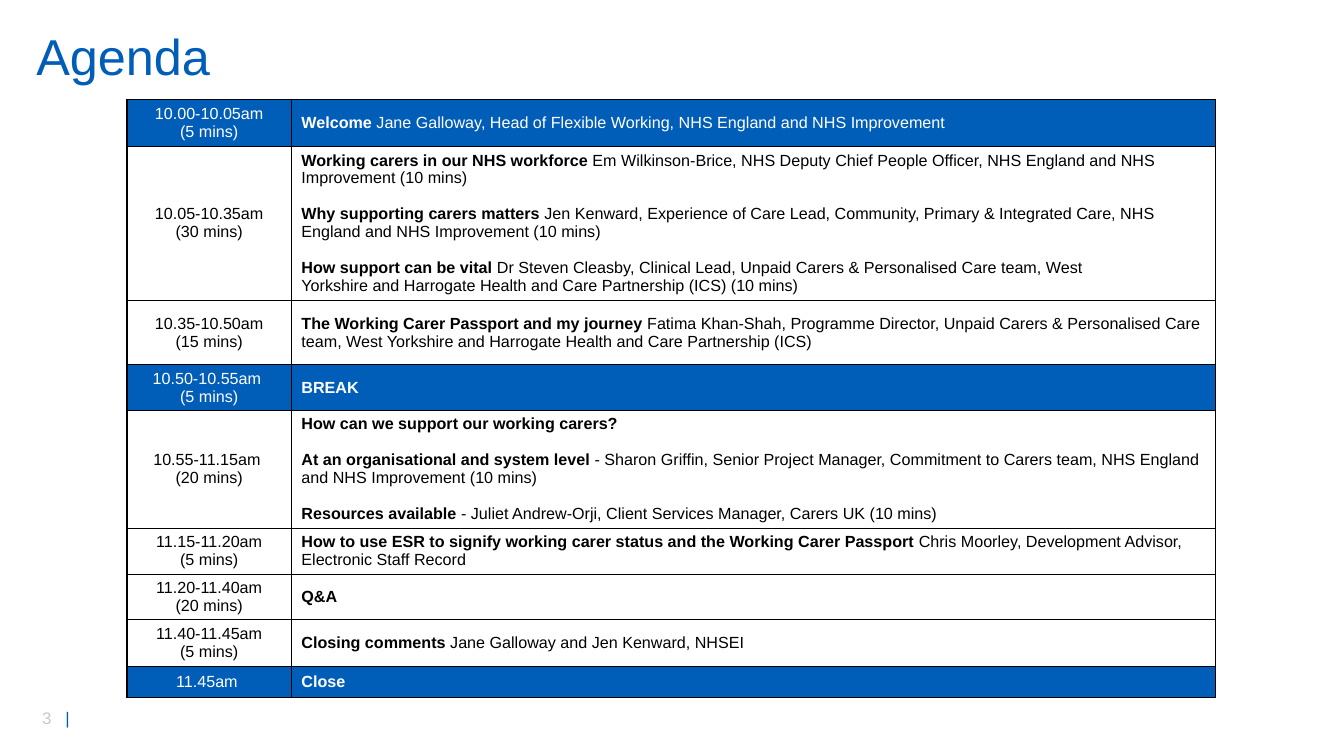
"""Build the Agenda slide: a title, a timetable and a page number."""
from dataclasses import dataclass

from lxml.etree import SubElement
from pptx import Presentation
from pptx.dml.color import RGBColor
from pptx.enum.text import MSO_ANCHOR as Anchor, MSO_AUTO_SIZE as AutoSize, PP_ALIGN as Align
from pptx.oxml.ns import qn
from pptx.util import Emu, Pt

PX = 9144
FONT = "Arial"
COLOURS = {"blue": "005EB8", "white": "FFFFFF", "black": "000000", "grey": "C9C9C9"}
AGENDA_SIZE = 11.5
TOPIC_GAP = 12.8
COLUMNS = (163, 917)


@dataclass(frozen=True)
class Topic:
    lead: str = ""
    detail: str = ""
    gap: bool = True


@dataclass(frozen=True)
class Session:
    height: int
    times: tuple[str, ...]
    topics: tuple[Topic, ...]
    highlight: bool = False


SESSIONS = (
    Session(46, ("10.00-10.05am", "(5 mins)"), (
        Topic("Welcome ", "Jane Galloway, Head of Flexible Working, NHS England and NHS Improvement"),
    ), True),
    Session(153, ("10.05-10.35am", "(30 mins)"), (
        Topic("Working carers in our NHS workforce ",
              "Em Wilkinson-Brice, NHS Deputy Chief People Officer, "
              "NHS England and NHS Improvement (10 mins)"),
        Topic("Why supporting carers matters ",
              "Jen Kenward, Experience of Care Lead, Community, Primary & Integrated Care, "
              "NHS England and NHS Improvement (10 mins)"),
        Topic("How support can be vital ",
              "Dr Steven Cleasby, Clinical Lead, Unpaid Carers & Personalised Care team, West"),
        Topic(detail="Yorkshire and Harrogate Health and Care Partnership (ICS) (10 mins)", gap=False),
    )),
    Session(64, ("10.35-10.50am", "(15 mins)"), (
        Topic("The Working Carer Passport and my journey ",
              "Fatima Khan-Shah, Programme Director, Unpaid Carers & Personalised Care team, "
              "West Yorkshire and Harrogate Health and Care Partnership (ICS)"),
    )),
    Session(45, ("10.50-10.55am ", "(5 mins)"), (Topic("BREAK"),), True),
    Session(117, ("10.55-11.15am ", "(20 mins)"), (
        Topic("How can we support our working carers?"),
        Topic("At an organisational and system level ",
              "- Sharon Griffin, Senior Project Manager, Commitment to Carers team, "
              "NHS England and NHS Improvement (10 mins)"),
        Topic("Resources available ",
              "- Juliet Andrew-Orji, Client Services Manager, Carers UK (10 mins)"),
    )),
    Session(46, ("11.15-11.20am", "(5 mins)"), (
        Topic("How to use ESR to signify working carer status and the Working Carer Passport ",
              "Chris Moorley, Development Advisor, Electronic Staff Record"),
    )),
    Session(45, ("11.20-11.40am", "(20 mins)"), (Topic("Q&A"),)),
    Session(46, ("11.40-11.45am", "(5 mins)"), (
        Topic("Closing comments ", "Jane Galloway and Jen Kenward, NHSEI"),
    )),
    Session(31, ("11.45am ",), (Topic("Close"),), True),
)


def px(length: int) -> Emu:
    """Turn whole px into EMU."""
    return Emu(length * PX)


def rgb(colour: str) -> RGBColor:
    """Look up a named colour."""
    return RGBColor.from_string(COLOURS[colour])


def add_run(paragraph, text: str, size: float, colour: str, bold: bool = False) -> None:
    """Add one formatted run to a paragraph."""
    run = paragraph.add_run()
    run.text = text
    run.font.name = FONT
    run.font.size = Pt(size)
    run.font.bold = bold
    run.font.color.rgb = rgb(colour)


def next_paragraph(frame, index: int):
    """Return the first paragraph of a frame, or a new one after it."""
    return frame.add_paragraph() if index else frame.paragraphs[0]


def style_cell(cell, fill: str) -> None:
    """Give a cell thin black borders, a fill, tight margins and a middle anchor."""
    properties = cell._tc.get_or_add_tcPr()
    for side in ("lnL", "lnR", "lnT", "lnB"):
        border = SubElement(properties, qn(f"a:{side}"), w=str(Pt(1)))
        solid = SubElement(border, qn("a:solidFill"))
        SubElement(solid, qn("a:srgbClr"), val=COLOURS["black"])
    cell.fill.solid()
    cell.fill.fore_color.rgb = rgb(fill)
    cell.margin_top = cell.margin_bottom = px(0)
    cell.vertical_anchor = Anchor.MIDDLE


def fill_session(time_cell, topic_cell, session: Session) -> None:
    """Write one session into its two cells."""
    fill, colour = ("blue", "white") if session.highlight else ("white", "black")
    for cell in (time_cell, topic_cell):
        style_cell(cell, fill)
    for index, time in enumerate(session.times):
        paragraph = next_paragraph(time_cell.text_frame, index)
        paragraph.alignment = Align.CENTER
        add_run(paragraph, time, AGENDA_SIZE, colour)
    for index, topic in enumerate(session.topics):
        paragraph = next_paragraph(topic_cell.text_frame, index)
        if index and topic.gap:
            paragraph.space_before = Pt(TOPIC_GAP)
        if topic.lead:
            add_run(paragraph, topic.lead, AGENDA_SIZE, colour, True)
        if topic.detail:
            add_run(paragraph, topic.detail, AGENDA_SIZE, colour)


def add_title(slide) -> None:
    """Place and format the title placeholder."""
    title = slide.shapes.title
    title.left, title.top, title.width, title.height = map(px, (26, 25, 1164, 67))
    frame = title.text_frame
    frame.auto_size = AutoSize.NONE
    frame.vertical_anchor = Anchor.MIDDLE
    heading = frame.paragraphs[0]
    heading.alignment = Align.LEFT
    heading.line_spacing = 0.9
    add_run(heading, "Agenda", 36, "blue")


def add_timetable(slide) -> None:
    """Draw the table of sessions."""
    height = sum(session.height for session in SESSIONS)
    timetable = slide.shapes.add_table(
        len(SESSIONS), len(COLUMNS), px(126), px(99), px(sum(COLUMNS)), px(height)).table
    timetable.first_row = timetable.horz_banding = False
    for column, width in zip(timetable.columns, COLUMNS):
        column.width = px(width)
    for row, session in zip(timetable.rows, SESSIONS):
        row.height = px(session.height)
        fill_session(row.cells[0], row.cells[1], session)


def add_page_number(slide) -> None:
    """Write the page number and its bar, set apart by a tab stop."""
    frame = slide.shapes.add_textbox(px(32), px(697), px(71), px(30)).text_frame
    frame.word_wrap = True
    footer = frame.paragraphs[0]
    tabs = SubElement(footer._p.get_or_add_pPr(), qn("a:tabLst"))
    SubElement(tabs, qn("a:tab"), pos=str(px(23)), algn="l")
    add_run(footer, "3\t", 12, "grey")
    add_run(footer, "|", 12, "blue")


def main() -> None:
    """Build and save the slide."""
    deck = Presentation()
    deck.slide_width, deck.slide_height = px(1333), px(750)
    slide = deck.slides.add_slide(deck.slide_layouts.get_by_name("Title Only"))
    add_page_number(slide)
    add_title(slide)
    add_timetable(slide)
    deck.save("out.pptx")


if __name__ == "__main__":
    main()
